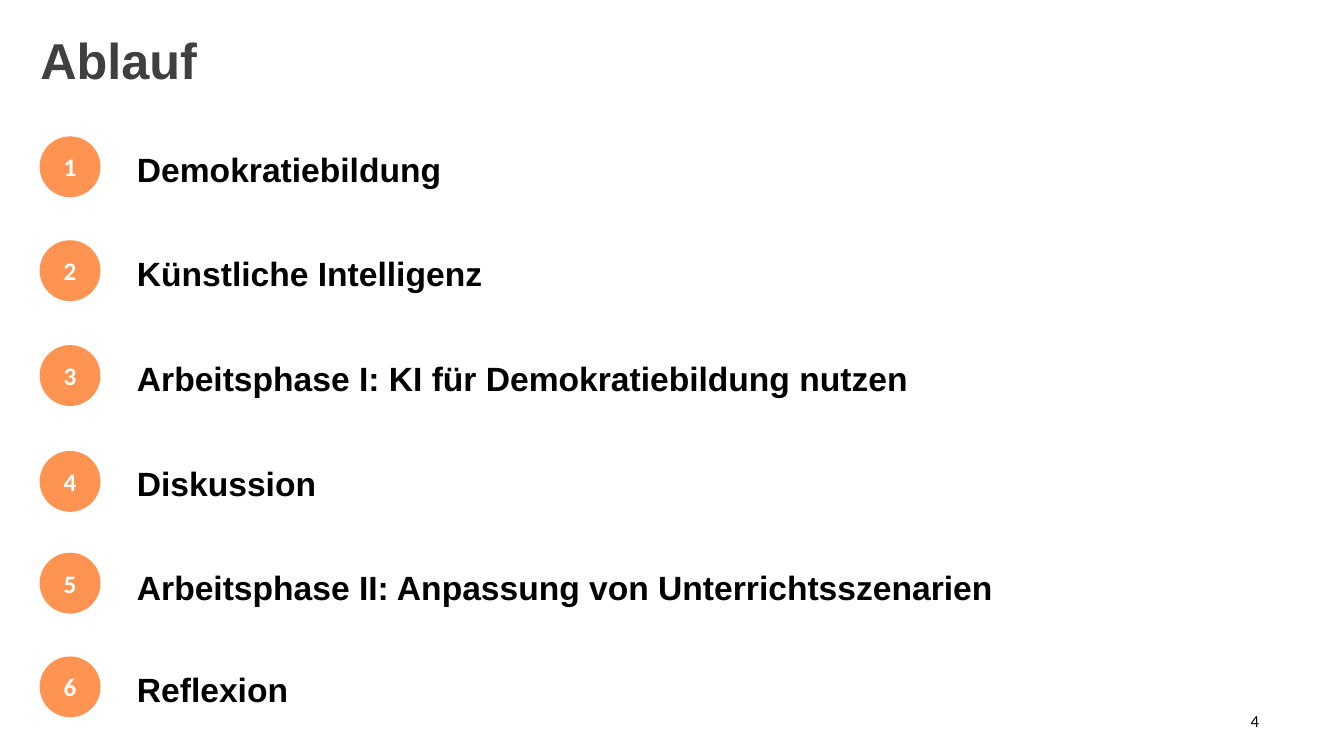
from pptx import Presentation
from pptx.dml.color import RGBColor
from pptx.enum.shapes import MSO_SHAPE
from pptx.enum.text import MSO_ANCHOR, PP_ALIGN
from pptx.util import Pt

OVAL = MSO_SHAPE.OVAL
TOP, MIDDLE = MSO_ANCHOR.TOP, MSO_ANCHOR.MIDDLE
LEFT, CENTER, RIGHT = PP_ALIGN.LEFT, PP_ALIGN.CENTER, PP_ALIGN.RIGHT
TITLE_ONLY = 5
BADGE_LEFT, BADGE_SIZE, LABEL_LEFT = 28.8, 42.5, 90.7
AGENDA = [
    ("Demokratiebildung", 97.9, (100.8, 673.2, 36.7), 1.07, TOP),
    ("Künstliche Intelligenz", 172.1, (175, 673.2, 67.7), 1.07, TOP),
    ("Arbeitsphase I: KI für Demokratiebildung nutzen", 247, (249.8, 673.2, 36), 1.07, TOP),
    ("Diskussion", 322.6, (325.4, 727.9, 36.7), 1.07, TOP),
    ("Arbeitsphase II: Anpassung von Unterrichtsszenarien", 395.3, (388.8, 673.2, 46.1), 1.5, MIDDLE),
    ("Reflexion", 469.4, (472.3, 673.2, 67.7), 1.07, TOP),
]


def color(value):
    """Turn a hex string into a colour."""
    return RGBColor.from_string(value)


class AgendaSlide:
    """Holds the style and the current slide."""

    heading_font, number_font = "Arial", "Calibri"
    accent, heading, ink, paper = "FF9352", "404040", "000000", "FFFFFF"

    def __init__(self, presentation):
        """Add a slide with a title placeholder."""
        self.slide = presentation.slides.add_slide(presentation.slide_layouts[TITLE_ONLY])

    def set_text(self, shape, text, font, size, ink, bold=True, align=LEFT, anchor=MIDDLE, spacing=1.0):
        """Fill a shape with one formatted paragraph."""
        frame = shape.text_frame
        frame.text = text
        frame.word_wrap = True
        frame.vertical_anchor = anchor
        paragraph = frame.paragraphs[0]
        paragraph.alignment = align
        paragraph.line_spacing = spacing
        run_font = paragraph.runs[0].font
        run_font.name, run_font.size, run_font.bold = font, Pt(size), bold
        run_font.color.rgb = color(ink)

    def title(self, text, left, top, width, height):
        """Place and format the title placeholder."""
        shape = self.slide.shapes.title
        shape.left, shape.top, shape.width, shape.height = Pt(left), Pt(top), Pt(width), Pt(height)
        self.set_text(shape, text, self.heading_font, 36, self.heading, spacing=0.9)

    def badge(self, number, left, top, size):
        """Draw a numbered circle."""
        shape = self.slide.shapes.add_shape(OVAL, Pt(left), Pt(top), Pt(size), Pt(size))
        shape.shadow.inherit = False
        shape.fill.solid()
        shape.fill.fore_color.rgb = color(self.accent)
        shape.line.color.rgb = color(self.accent)
        shape.line.width = Pt(1)
        self.set_text(shape, str(number), self.number_font, 18, self.paper, align=CENTER)

    def label(self, text, left, top, width, height, spacing, anchor):
        """Add the text of an agenda item."""
        shape = self.slide.shapes.add_textbox(Pt(left), Pt(top), Pt(width), Pt(height))
        self.set_text(shape, text, self.heading_font, 24, self.ink, anchor=anchor, spacing=spacing)

    def page_number(self, number, left, top, width, height):
        """Add the page number."""
        shape = self.slide.shapes.add_textbox(Pt(left), Pt(top), Pt(width), Pt(height))
        self.set_text(shape, str(number), self.number_font, 12, self.ink, bold=False, align=RIGHT)


def main():
    """Build and save the agenda slide."""
    presentation = Presentation()
    presentation.slide_width, presentation.slide_height = Pt(960), Pt(540)
    agenda = AgendaSlide(presentation)
    agenda.title("Ablauf", 21.6, 0, 783.4, 90)
    agenda.page_number(4, 690.5, 500.4, 216, 28.8)
    for number, (text, badge_top, (top, width, height), spacing, anchor) in enumerate(AGENDA, 1):
        agenda.badge(number, BADGE_LEFT, badge_top, BADGE_SIZE)
        agenda.label(text, LABEL_LEFT, top, width, height, spacing, anchor)
    presentation.save("out.pptx")


if __name__ == "__main__":
    main()
